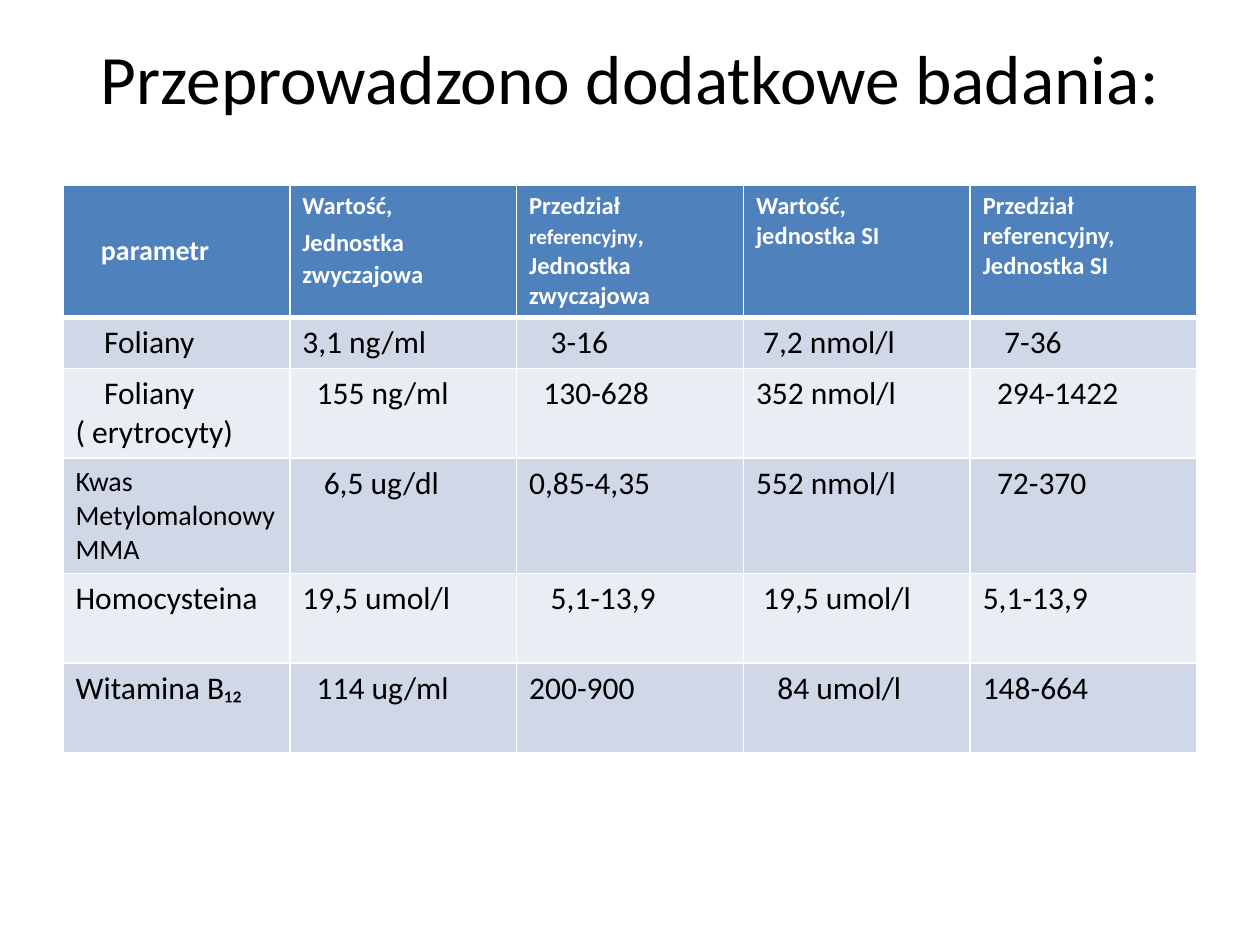
from lxml.etree import SubElement
from pptx import Presentation
from pptx.dml.color import RGBColor
from pptx.enum.text import MSO_ANCHOR, PP_ALIGN
from pptx.oxml.ns import qn
from pptx.util import Pt

COLOURS = {"text": "000000", "white": "FFFFFF", "header": "4F81BD",
           "odd": "D0D8E8", "even": "E9EDF4"}
SPACE = 4.07  # indent step in points


def add_text(paragraph, text, size=18, bold=False, colour="text", indent=0):
    run = paragraph.add_run()
    run.text = text
    run.font.name = "Calibri"
    run.font.size = Pt(size)
    run.font.bold = bold
    run.font.color.rgb = RGBColor.from_string(COLOURS[colour])
    if indent:
        properties = paragraph._p.get_or_add_pPr()
        properties.set("marL", str(Pt(indent)))
        properties.set("indent", "0")


def style_cell(cell, fill, bottom):
    properties = cell._tc.get_or_add_tcPr()
    for side, width in (("L", 1), ("R", 1), ("T", 1), ("B", bottom)):
        line = SubElement(properties, qn(f"a:ln{side}"), w=str(Pt(width)))
        paint = SubElement(line, qn("a:solidFill"))
        SubElement(paint, qn("a:srgbClr"), val=COLOURS["white"])
    cell.fill.solid()
    cell.fill.fore_color.rgb = RGBColor.from_string(COLOURS[fill])


presentation = Presentation()
presentation.slide_width, presentation.slide_height = Pt(720), Pt(540)
slide = presentation.slides.add_slide(presentation.slide_layouts[5])

# Title
title = slide.shapes.title
title.left, title.top, title.width, title.height = Pt(36), Pt(21.6), Pt(648), Pt(44)
title.text_frame.vertical_anchor = MSO_ANCHOR.MIDDLE
heading = title.text_frame.paragraphs[0]
heading.alignment = PP_ALIGN.CENTER
add_text(heading, "Przeprowadzono dodatkowe badania:", size=39.6)

# Header cells: paragraphs made of (text, size) runs
headers = [
    [[("parametr", 16)]],
    [[("Wartość,", 14)], [("Jednostka", 14), (" ", 18), ("zwyczajowa", 14)]],
    [[("Przedział ", 14), ("referencyjny", 12), (",", 14)],
     [("Jednostka zwyczajowa", 14)]],
    [[("Wartość,", 14)], [("jednostka SI", 14)]],
    [[("Przedział referencyjny,", 14)], [("Jednostka SI", 14)]],
]

# Results: (text, indent steps) per cell
results = [
    [("Foliany", 4), ("3,1 ng/ml", 0), ("3-16", 3), ("7,2 nmol/l", 1), ("7-36", 3)],
    [("Foliany\n( erytrocyty)", 4), ("155 ng/ml", 2), ("130-628", 2),
     ("352 nmol/l", 0), ("294-1422", 2)],
    [("Kwas\nMetylomalonowy\nMMA", 0), ("6,5 ug/dl", 3), ("0,85-4,35", 0),
     ("552 nmol/l", 0), ("72-370", 2)],
    [("Homocysteina", 0), ("19,5 umol/l", 0), ("5,1-13,9", 3),
     ("19,5 umol/l", 1), ("5,1-13,9", 0)],
    [("Witamina B₁₂", 0), ("114 ug/ml", 2), ("200-900", 0),
     ("84 umol/l", 3), ("148-664", 0)],
]

# Table grid
row_heights = [75.6, 29, 51.2, 65.8, 51.2, 51.2]
table = slide.shapes.add_table(len(row_heights), len(headers), Pt(36), Pt(105.8),
                               Pt(648), Pt(sum(row_heights))).table
for column in table.columns:
    column.width = Pt(648 / len(headers))
for row, height in zip(table.rows, row_heights):
    row.height = Pt(height)

# Header row
for column, paragraphs in enumerate(headers):
    cell = table.cell(0, column)
    style_cell(cell, "header", bottom=3)
    for number, runs in enumerate(paragraphs):
        frame = cell.text_frame
        paragraph = frame.add_paragraph() if number else frame.paragraphs[0]
        for text, size in runs:
            add_text(paragraph, text, size=size, bold=True, colour="white",
                     indent=0 if column else 14.5)
table.cell(0, 0).vertical_anchor = MSO_ANCHOR.MIDDLE

# Result rows
for row, values in enumerate(results, start=1):
    for column, (text, steps) in enumerate(values):
        cell = table.cell(row, column)
        style_cell(cell, "odd" if row % 2 else "even", bottom=1)
        lines = text.split("\n")
        for number, line in enumerate(lines):
            frame = cell.text_frame
            paragraph = frame.add_paragraph() if number else frame.paragraphs[0]
            add_text(paragraph, line, size=16 if len(lines) == 3 else 18,
                     indent=0 if number else steps * SPACE)

presentation.save("out.pptx")
